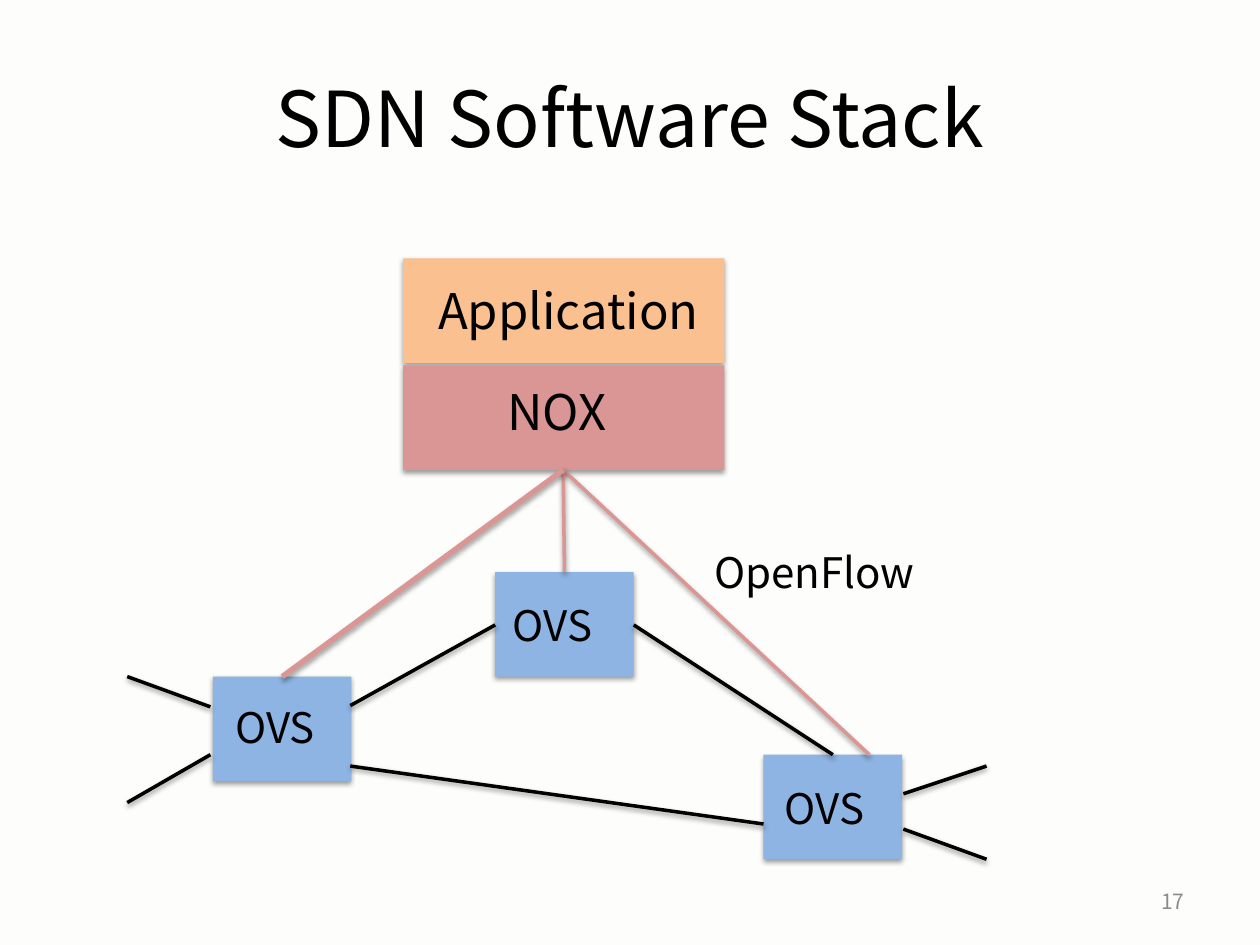
from lxml import etree
from pptx import Presentation
from pptx import util as u
from pptx.dml.color import RGBColor
from pptx.enum import shapes, text
from pptx.oxml import ns

FONT = "Noto Sans CJK JP"
COLORS = {
    "background": "FDFDFB",
    "text": "000000",
    "number": "8C8C8C",
    "switch": "8EB4E3",
    "application": "FAC090",
    "controller": "D99694",
    "link": "000000",
}
SWITCH_SIZE = (1.1, 0.83)
LAYER_SIZE = (2.55, 0.83)
SWITCHES = [
    ((1.69, 5.37), (1.77, 5.52)),
    ((3.93, 4.54), (3.97, 4.71)),
    ((6.06, 5.99), (6.13, 6.16)),
]
LINKS = [
    ((2.78, 5.6), (3.93, 4.96)),
    ((5.03, 4.96), (6.61, 5.99)),
    ((2.78, 6.08), (6.06, 6.54)),
    ((1.01, 6.37), (1.67, 5.99)),
    ((1.01, 5.37), (1.67, 5.61)),
    ((7.17, 6.58), (7.83, 6.82)),
    ((7.17, 6.3), (7.83, 6.08)),
]
CONTROLLER_PORT = (4.47, 3.73)
CONTROL_CHANNELS = [((6.9, 5.99), 2), ((4.48, 4.54), 2), ((2.24, 5.37), 3)]


def rgb(name):
    return RGBColor.from_string(COLORS[name])


def inches(values):
    return [u.Inches(v) for v in values]


def add_shadow(sp, distance=1.6, opacity=38):
    effects = etree.SubElement(sp._element.spPr, ns.qn("a:effectLst"))
    shadow = etree.SubElement(
        effects, ns.qn("a:outerShdw"), blurRad=str(u.Pt(3.1)),
        dist=str(u.Pt(distance)), dir="5400000", rotWithShape="0")
    color = etree.SubElement(shadow, ns.qn("a:srgbClr"), val="000000")
    etree.SubElement(color, ns.qn("a:alpha"), val=str(opacity * 1000))


def add_box(s, position, size, color):
    sp = s.shapes.add_shape(
        shapes.MSO_SHAPE.RECTANGLE, *inches(position + size))
    sp.fill.solid()
    sp.fill.fore_color.rgb = rgb(color)
    sp.line.fill.background()
    add_shadow(sp)


def add_line(s, start, end, color, width=2, **shadow):
    line = s.shapes.add_connector(
        shapes.MSO_CONNECTOR.STRAIGHT, *inches(start + end))
    line.line.color.rgb = rgb(color)
    line.line.width = u.Pt(width)
    add_shadow(line, **shadow)


def add_text(s, position, size, words, points, color="text",
             align=text.PP_ALIGN.LEFT, anchor=text.MSO_ANCHOR.TOP):
    tf = s.shapes.add_textbox(*inches(position + size)).text_frame
    tf.word_wrap = True
    tf.vertical_anchor = anchor
    p = tf.paragraphs[0]
    p.alignment = align
    r = p.add_run()
    r.text = words
    r.font.name = FONT
    r.font.size = u.Pt(points)
    r.font.color.rgb = rgb(color)


def main():
    prs = Presentation()
    prs.slide_width, prs.slide_height = inches((10, 7.5))
    s = prs.slides.add_slide(prs.slide_layouts[6])
    s.background.fill.solid()
    s.background.fill.fore_color.rgb = rgb("background")

    middle = text.MSO_ANCHOR.MIDDLE
    add_text(s, (0.5, 0.3), (9, 1.25), "SDN Software Stack", 44,
             align=text.PP_ALIGN.CENTER, anchor=middle)
    add_text(s, (7.17, 6.95), (2.33, 0.4), "17", 12, "number",
             text.PP_ALIGN.RIGHT, middle)

    add_box(s, (3.2, 2.05), LAYER_SIZE, "application")
    add_box(s, (3.2, 2.9), LAYER_SIZE, "controller")
    for box, _ in SWITCHES:
        add_box(s, box, SWITCH_SIZE, "switch")

    for start, end in LINKS:
        add_line(s, start, end, "link")
    for end, width in CONTROL_CHANNELS:
        add_line(s, CONTROLLER_PORT, end, "controller", width)

    add_text(s, (3.93, 2.98), (1.18, 0.57), "NOX", 28)
    add_text(s, (3.38, 2.18), (2.43, 0.57), "Application", 28)
    for _, label in SWITCHES:
        add_text(s, label, (1.39, 0.5), "OVS", 24)
    add_text(s, (5.57, 4.29), (1.85, 0.5), "OpenFlow", 24)

    prs.save("out.pptx")


if __name__ == "__main__":
    main()
